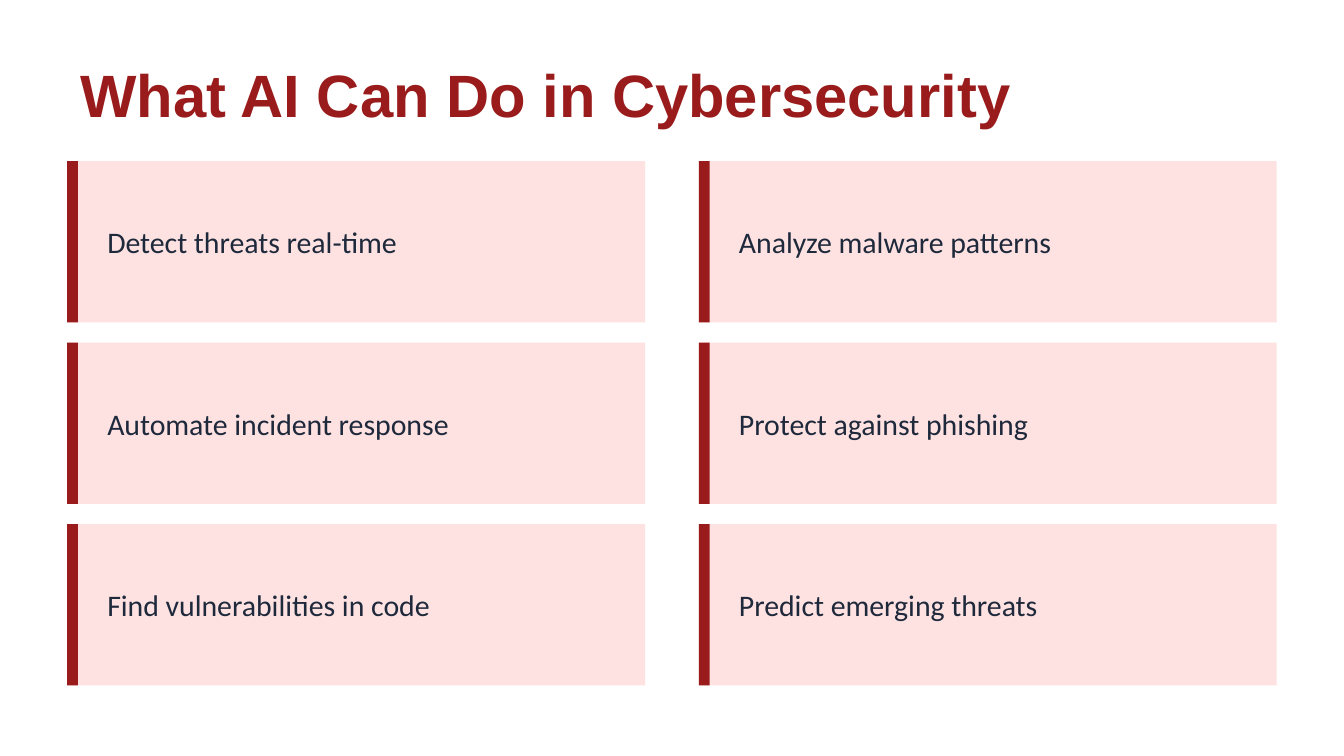
import pptx
import pptx.dml.color
import pptx.enum.shapes
import pptx.enum.text
import pptx.util

# Content: one list per column of cards
TITLE = "What AI Can Do in Cybersecurity"
COLUMNS = [
    ["Detect threats real-time", "Automate incident response", "Find vulnerabilities in code"],
    ["Analyze malware patterns", "Protect against phishing", "Predict emerging threats"],
]
COLORS = {"accent": "991B1B", "card": "FEE2E2", "text": "1E293B"}

# Layout in px, 200 px to the inch
PX = 4572
SLIDE_W, SLIDE_H = 2000, 1125
MARGIN, CARDS_TOP = 100, 240
CARD_W, CARD_H = 860, 240
GAP_X, GAP_Y = 80, 30
BAR_W = 16
INSET_X, INSET_Y = 40, 30


def emu(*lengths):
    return [pptx.util.Emu(length * PX) for length in lengths]


def rgb(name):
    return pptx.dml.color.RGBColor.from_string(COLORS[name])


def add_rectangle(page, left, top, width, height, color):
    shape = page.shapes.add_shape(
        pptx.enum.shapes.MSO_SHAPE.RECTANGLE, *emu(left, top, width, height))
    shape.shadow.inherit = False
    shape.fill.solid()
    shape.fill.fore_color.rgb = rgb(color)
    shape.line.fill.background()


def add_text(page, left, top, width, height, text, font, size, color, bold=False):
    box = page.shapes.add_textbox(*emu(left, top, width, height))
    frame = box.text_frame
    frame.word_wrap = True
    frame.vertical_anchor = pptx.enum.text.MSO_ANCHOR.MIDDLE
    frame.text = text
    span = frame.paragraphs[0].runs[0]
    span.font.name = font
    span.font.size = pptx.util.Pt(size)
    span.font.bold = bold
    span.font.color.rgb = rgb(color)


def add_card(page, left, top, text):
    add_rectangle(page, left, top, CARD_W, CARD_H, "card")
    add_rectangle(page, left, top, BAR_W, CARD_H, "accent")
    add_text(page, left + INSET_X, top + INSET_Y, CARD_W - 2 * INSET_X,
             CARD_H - 2 * INSET_Y, text, "Calibri", 16, "text")


def main():
    deck = pptx.Presentation()
    deck.slide_width, deck.slide_height = emu(SLIDE_W, SLIDE_H)
    page = deck.slides.add_slide(deck.slide_layouts[6])

    # Title
    add_text(page, MARGIN, 80, SLIDE_W - 2 * MARGIN, 120, TITLE, "Arial", 32, "accent", bold=True)

    # Grid of cards
    for column, texts in enumerate(COLUMNS):
        for row, text in enumerate(texts):
            left = MARGIN + column * (CARD_W + GAP_X)
            top = CARDS_TOP + row * (CARD_H + GAP_Y)
            add_card(page, left, top, text)

    deck.save("out.pptx")


if __name__ == "__main__":
    main()
